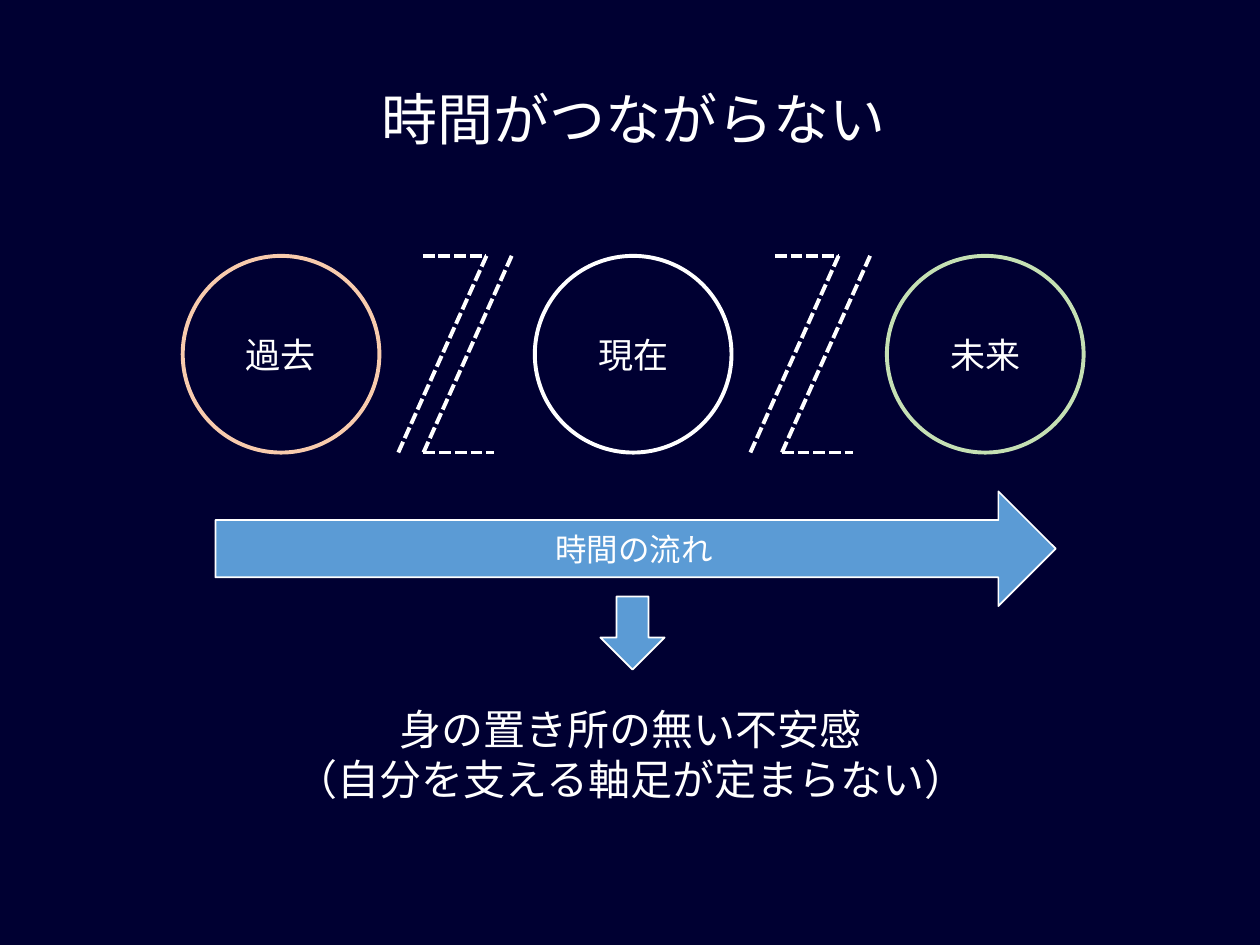
from lxml.etree import SubElement
from pptx import Presentation
from pptx.dml.color import RGBColor
from pptx.enum.dml import MSO_LINE
from pptx.enum.shapes import MSO_CONNECTOR, MSO_SHAPE
from pptx.enum.text import MSO_ANCHOR, PP_ALIGN
from pptx.oxml.ns import qn
from pptx.util import Pt

NAVY = RGBColor(0x00, 0x00, 0x32)
WHITE = RGBColor(0xFF, 0xFF, 0xFF)
PEACH = RGBColor(0xF8, 0xCB, 0xAD)
GREEN = RGBColor(0xC5, 0xE0, 0xB4)
BLUE = RGBColor(0x5B, 0x9B, 0xD5)
FONT = "Noto Sans CJK JP"


def apply(item, style):
    """Set each attribute named in a style."""
    for name, value in style.items():
        setattr(item, name, value)


def write(frame, lines, size, align=PP_ALIGN.CENTER):
    """Fill a text frame with one paragraph per line."""
    for i, line in enumerate(lines):
        para = frame.add_paragraph() if i else frame.paragraphs[0]
        para.alignment = align
        run = para.add_run()
        run.text = line
        apply(run.font, {"name": FONT, "size": Pt(size)})
        run.font.color.rgb = WHITE
        SubElement(run.font._element, qn("a:ea")).set("typeface", FONT)


def label(slide, box, lines, size, wrap=True, align=PP_ALIGN.CENTER):
    """Place a text box."""
    frame = slide.shapes.add_textbox(*map(Pt, box)).text_frame
    frame.word_wrap = wrap
    write(frame, lines, size, align)


def circle(slide, box, text, color):
    """Place an outlined circle with a centred word."""
    shape = slide.shapes.add_shape(MSO_SHAPE.OVAL, *map(Pt, box))
    shape.shadow.inherit = False
    shape.fill.background()
    shape.line.color.rgb = color
    shape.line.width = Pt(2.25)
    apply(shape.text_frame, {"word_wrap": True, "vertical_anchor": MSO_ANCHOR.MIDDLE})
    write(shape.text_frame, [text], 20)


def arrow(slide, box, turn=0):
    """Place a blue block arrow."""
    shape = slide.shapes.add_shape(MSO_SHAPE.RIGHT_ARROW, *map(Pt, box))
    shape.shadow.inherit = False
    shape.rotation = turn
    shape.fill.solid()
    shape.fill.fore_color.rgb = BLUE
    shape.line.color.rgb = WHITE
    shape.line.width = Pt(1)


def dash(slide, *ends):
    """Draw a white dashed line."""
    line = slide.shapes.add_connector(MSO_CONNECTOR.STRAIGHT, *map(Pt, ends))
    line.line.color.rgb = WHITE
    apply(line.line, {"width": Pt(2.25), "dash_style": MSO_LINE.SQUARE_DOT})
    SubElement(line._element.spPr, qn("a:effectLst"))


def rift(slide, box, gap):
    """Draw a dashed break of two slants with a bar at each end."""
    left, top, width, height = box
    low, right = top + height, left + width
    for shift in (0, gap):
        dash(slide, right + shift, top, left + shift, low)
    dash(slide, right - 36.4, top, right, top)
    dash(slide, left + gap, low, left + gap + 40.4, low)


def stages(slide, box):
    """Lay out three evenly spaced circles with a break between each pair."""
    left, top, width, size = box
    step = (width - size) / 2
    words = [("過去", PEACH), ("現在", WHITE), ("未来", GREEN)]
    for i, (word, color) in enumerate(words):
        circle(slide, (left + i * step, top, size, size), word, color)
    for i, gap in enumerate((14.4, 18)):
        rift(slide, (left + 123.2 + i * step, top, 50.4, size), gap)


def flow(slide, box):
    """Place the time arrow, its label and the arrow below it."""
    left, top, width, height = box
    arrow(slide, box)
    label(slide, (left + 187.2, top + 18.7, 105.1, 28.8), ["時間の流れ"], 18, False, PP_ALIGN.LEFT)
    arrow(slide, (left + 217.4, top + height - 2.9, 41.8, 36.7), 90)


def main():
    """Build and save the slide."""
    deck = Presentation()
    apply(deck, {"slide_width": Pt(720), "slide_height": Pt(540)})
    slide = deck.slides.add_slide(deck.slide_layouts[6])
    slide.background.fill.solid()
    slide.background.fill.fore_color.rgb = NAVY
    stages(slide, (104.4, 146.2, 514.8, 112.4))
    flow(slide, (123.1, 280.8, 480.2, 65.5))
    label(slide, (23, 44.6, 678.2, 46.1), ["時間がつながらない"], 32)
    lines = ["身の置き所の無い不安感", "（自分を支える軸足が定まらない）"]
    label(slide, (157.7, 398.2, 405.4, 65.5), lines, 24)
    deck.save("out.pptx")


if __name__ == "__main__":
    main()
